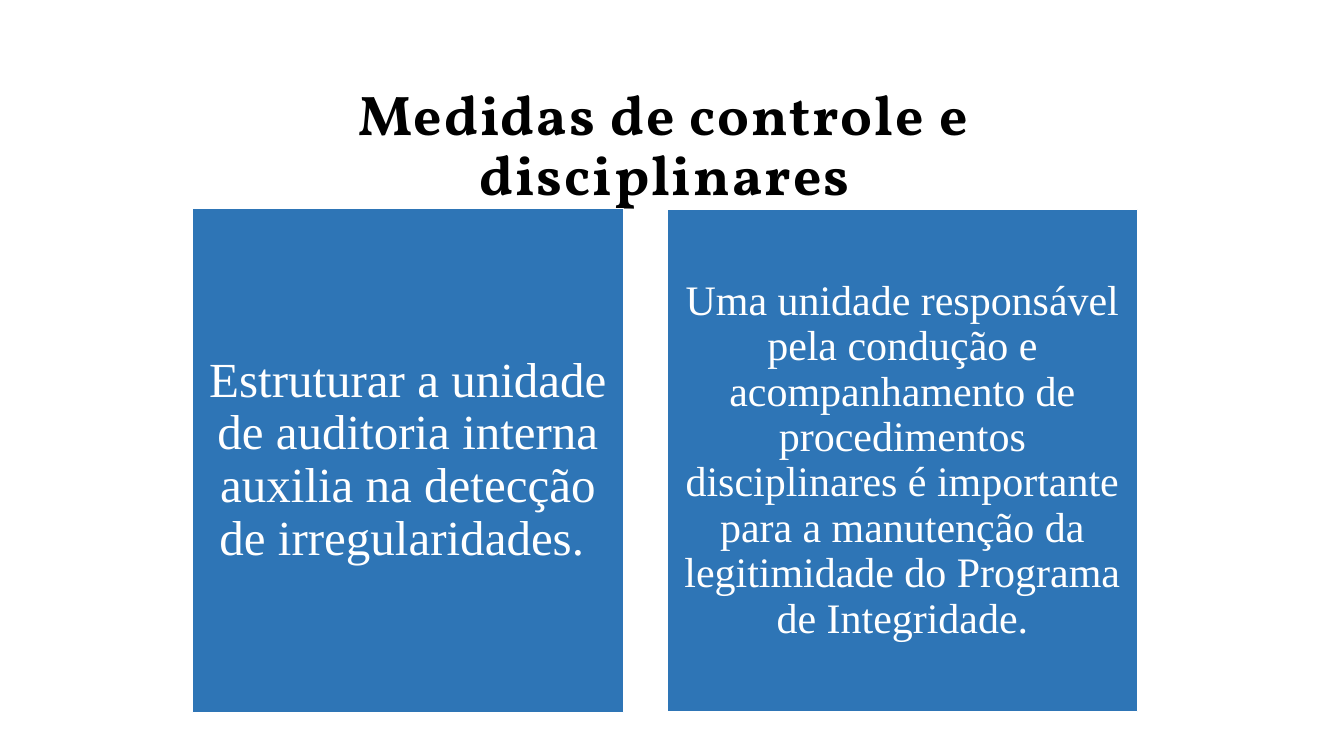
from pptx import Presentation
from pptx.dml.color import RGBColor
from pptx.enum.shapes import MSO_SHAPE
from pptx.enum.text import MSO_ANCHOR, MSO_AUTO_SIZE, PP_ALIGN
from pptx.util import Pt

TITLE = "Medidas de controle e disciplinares"
CARDS = [
    {"text": "Estruturar a unidade de auditoria interna auxilia na detecção "
             "de irregularidades. ",
     "box": (137.5, 149, 308, 360), "size": 35, "inset": 10.8},
    {"text": "Uma unidade responsável pela condução e acompanhamento de "
             "procedimentos disciplinares é importante para a manutenção da "
             "legitimidade do Programa de Integridade.",
     "box": (476.6, 149.8, 336.2, 358.5), "size": 30, "inset": 8.6},
]
THEME = {
    "blue": RGBColor(0x2E, 0x75, 0xB6),
    "white": RGBColor(255, 255, 255),
    "black": RGBColor(0, 0, 0),
    "head": "Vollkorn",
    "body": "Times New Roman",
    "title": 39.9,
    "track": 140,
}


def apply(item, values):
    """Set each named value on the item."""
    for name, value in values.items():
        setattr(item, name, value)


def write(shape, text, font, inset=0, wrap=True):
    """Put one centred paragraph in the shape and return its run."""
    frame = shape.text_frame
    sides = ("margin_left", "margin_top", "margin_right", "margin_bottom")
    apply(frame, dict.fromkeys(sides, Pt(inset)) | {
        "auto_size": MSO_AUTO_SIZE.NONE, "word_wrap": wrap,
        "vertical_anchor": MSO_ANCHOR.MIDDLE})
    para = frame.paragraphs[0]
    apply(para, {"alignment": PP_ALIGN.CENTER, "line_spacing": 0.9,
                 "space_before": Pt(0)})
    run = para.add_run()
    run.text = text
    color = font.pop("color")
    apply(run.font, font)
    run.font.color.rgb = color
    return run


def add_title(slide):
    """Format the title placeholder."""
    title = slide.shapes.title
    apply(title, {"left": Pt(231.8), "top": Pt(71.3),
                  "width": Pt(486), "height": Pt(67.7)})
    run = write(title, TITLE, {
        "name": THEME["head"], "size": Pt(THEME["title"]), "bold": True,
        "color": THEME["black"]}, wrap=False)
    run.font._element.set("spc", str(THEME["track"]))


def add_card(slide, card):
    """Draw one blue card with its text."""
    box = map(Pt, card["box"])
    shape = slide.shapes.add_shape(MSO_SHAPE.RECTANGLE, *box)
    shape.shadow.inherit = False
    shape.fill.solid()
    shape.fill.fore_color.rgb = THEME["blue"]
    shape.line.color.rgb = THEME["white"]
    shape.line.width = Pt(1)
    write(shape, card["text"], {
        "name": THEME["body"], "size": Pt(card["size"]),
        "color": THEME["white"]}, card["inset"])


def main():
    """Build and save the slide."""
    deck = Presentation()
    apply(deck, {"slide_width": Pt(960), "slide_height": Pt(540)})
    slide = deck.slides.add_slide(deck.slide_layouts[5])
    add_title(slide)
    for card in CARDS:
        add_card(slide, card)
    deck.save("out.pptx")


if __name__ == "__main__":
    main()
